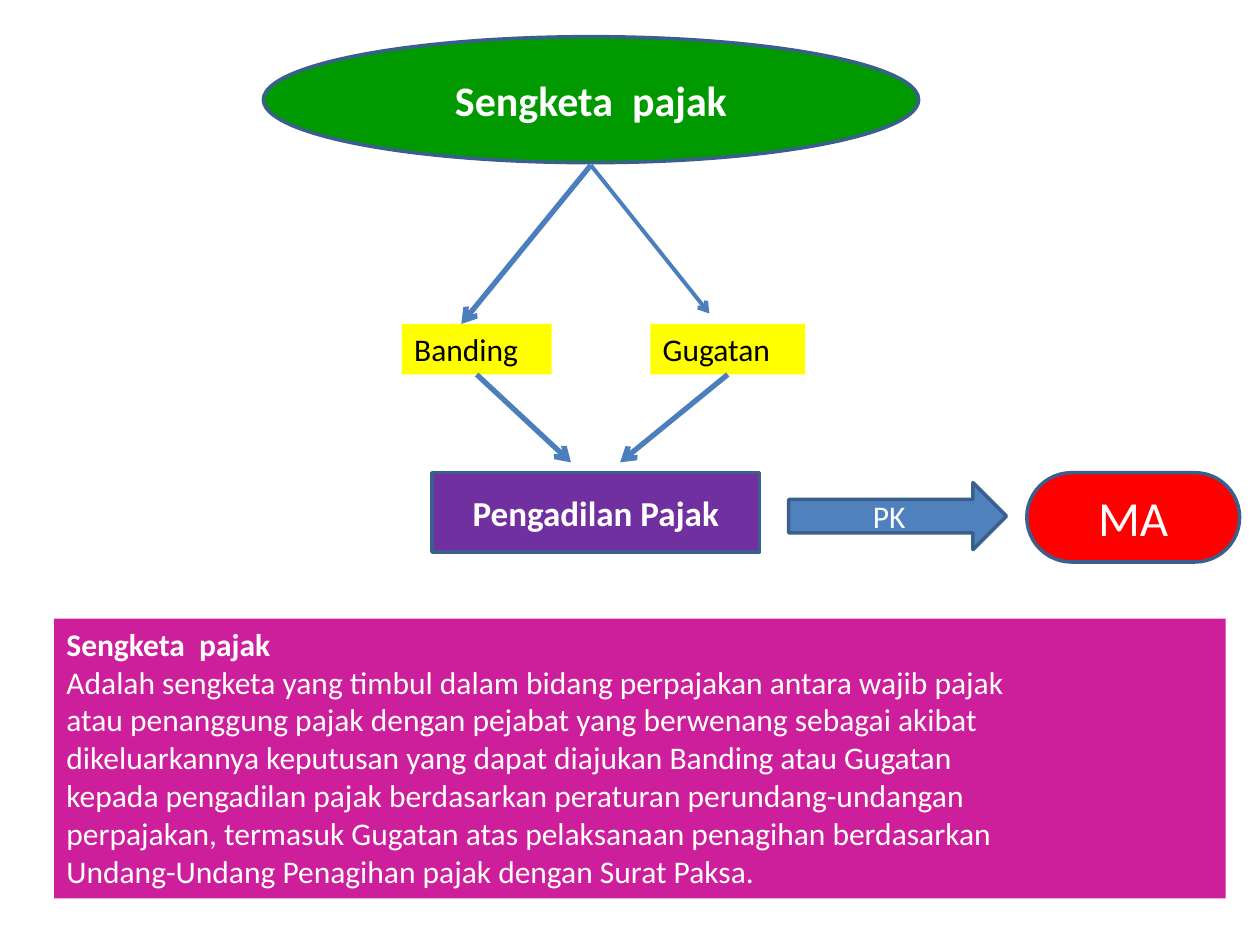
"""Build the tax dispute (sengketa pajak) flow slide."""
from dataclasses import dataclass
from typing import Optional

from pptx import Presentation
from pptx.dml.color import RGBColor
from pptx.enum import shapes, text
from pptx.oxml import ns, xmlchemy
from pptx.util import Cm, Pt

KIND = shapes.MSO_SHAPE


@dataclass(frozen=True)
class Theme:
    """Colours, font and type sizes of the slide."""
    font: str = "Calibri"
    white: str = "FFFFFF"
    black: str = "000000"
    green: str = "009900"
    yellow: str = "FFFF00"
    purple: str = "7030A0"
    blue: str = "4F81BD"
    red: str = "FF0000"
    magenta: str = "CD1F9B"
    outline: str = "3A5F8C"
    arrow: str = "4B7EBC"
    body: int = 18
    court: int = 20
    heading: int = 24
    appeal: int = 28
    border: float = 2


THEME = Theme()


@dataclass(frozen=True)
class Node:
    """A filled shape with its text; box is left, top, width, height in cm."""
    lines: tuple
    box: tuple
    fill: str
    kind: int = KIND.RECTANGLE
    size: int = THEME.body
    ink: str = THEME.white
    bold_lines: int = 0
    outlined: bool = True
    roundness: Optional[float] = None


@dataclass(frozen=True)
class Arrow:
    """An arrow between two points in cm, optionally leaving a node's bottom."""
    start: tuple
    end: tuple
    weight: float = 3
    source: Optional[str] = None


def rgb(value: str) -> RGBColor:
    """Return the colour for a hex value."""
    return RGBColor.from_string(value)


def draw_node(slide, node: Node):
    """Draw a node, centring the text of outlined ones."""
    shape = slide.shapes.add_shape(node.kind, *map(Cm, node.box))
    shape.shadow.inherit = False
    shape.fill.solid()
    shape.fill.fore_color.rgb = rgb(node.fill)
    if node.roundness is not None:
        shape.adjustments[0] = node.roundness
    if node.outlined:
        shape.line.color.rgb = rgb(THEME.outline)
        shape.line.width = Pt(THEME.border)
        anchor, align = text.MSO_ANCHOR.MIDDLE, text.PP_ALIGN.CENTER
    else:
        shape.line.fill.background()
        anchor, align = text.MSO_ANCHOR.TOP, text.PP_ALIGN.LEFT
    frame = shape.text_frame
    for name, value in {"word_wrap": True, "vertical_anchor": anchor}.items():
        setattr(frame, name, value)
    frame.text = "\n".join(node.lines)
    for index, paragraph in enumerate(frame.paragraphs):
        paragraph.alignment = align
        font = paragraph.runs[0].font
        formats = {"name": THEME.font, "size": Pt(node.size), "bold": index < node.bold_lines}
        for name, value in formats.items():
            setattr(font, name, value)
        font.color.rgb = rgb(node.ink)
    return shape


def draw_arrow(slide, arrow: Arrow, drawn: dict) -> None:
    """Draw an open-headed arrow."""
    link = slide.shapes.add_connector(
        shapes.MSO_CONNECTOR.STRAIGHT, *map(Cm, arrow.start + arrow.end))
    if arrow.source:
        link.begin_connect(drawn[arrow.source], 2)
    link.line.color.rgb = rgb(THEME.arrow)
    link.line.width = Pt(arrow.weight)
    head = xmlchemy.OxmlElement("a:tailEnd")
    head.set("type", "arrow")
    link.line._get_or_add_ln().append(head)
    properties = link._element.find(ns.qn("p:spPr"))
    properties.append(xmlchemy.OxmlElement("a:effectLst"))


DEFINITION = (
    "Sengketa  pajak",
    "Adalah sengketa yang timbul dalam bidang perpajakan antara wajib pajak",
    "atau penanggung pajak dengan pejabat yang berwenang sebagai akibat",
    "dikeluarkannya keputusan yang dapat diajukan Banding atau Gugatan",
    "kepada pengadilan pajak berdasarkan peraturan perundang-undangan",
    "perpajakan, termasuk Gugatan atas pelaksanaan penagihan berdasarkan",
    "Undang-Undang Penagihan pajak dengan Surat Paksa.",
)

NODES = {
    "dispute": Node(("Sengketa  pajak",), (5.31, 0.74, 13.21, 2.54), THEME.green,
                    KIND.OVAL, THEME.heading, bold_lines=1),
    "definition": Node(DEFINITION, (1.09, 12.47, 23.62, 5.64), THEME.magenta,
                       bold_lines=1, outlined=False),
    "banding": Node(("Banding",), (8.1, 6.53, 3.02, 1.02), THEME.yellow,
                    ink=THEME.black, outlined=False),
    "gugatan": Node(("Gugatan",), (13.11, 6.53, 3.12, 1.02), THEME.yellow,
                    ink=THEME.black, outlined=False),
    "court": Node(("Pengadilan Pajak",), (8.71, 9.53, 6.6, 1.6), THEME.purple,
                  size=THEME.court, bold_lines=1),
    "review": Node(("PK",), (15.9, 9.73, 4.39, 1.35), THEME.blue, KIND.RIGHT_ARROW),
    "supreme": Node(("MA",), (20.7, 9.53, 4.29, 1.8), THEME.red,
                    KIND.ROUNDED_RECTANGLE, THEME.appeal, roundness=0.5),
}

FORK = (11.91, 3.33)
ARROWS = (
    Arrow(FORK, (9.3, 6.53)),
    Arrow(FORK, (14.3, 6.32), weight=2.25),
    Arrow((9.61, 7.55), (11.51, 9.32), source="banding"),
    Arrow((14.67, 7.55), (12.5, 9.32), source="gugatan"),
)


def main() -> None:
    """Build and save the slide."""
    deck = Presentation()
    deck.slide_width, deck.slide_height = Cm(25.4), Cm(19.05)
    slide = deck.slides.add_slide(deck.slide_layouts.get_by_name("Blank"))
    drawn = {key: draw_node(slide, node) for key, node in NODES.items()}
    for arrow in ARROWS:
        draw_arrow(slide, arrow, drawn)
    deck.save("out.pptx")


if __name__ == "__main__":
    main()
